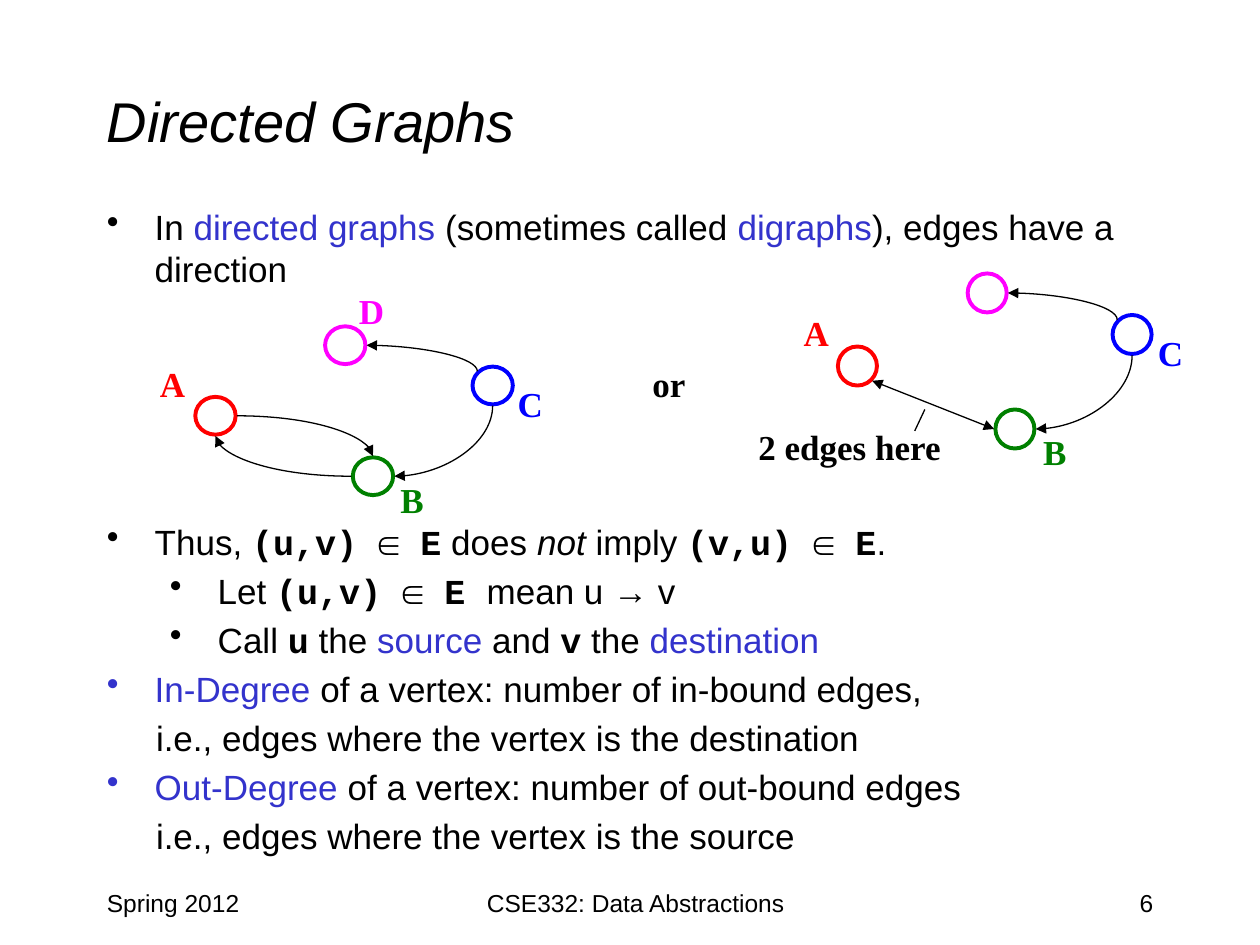
from lxml.etree import SubElement
from pptx import Presentation
from pptx.dml.color import RGBColor
from pptx.enum.shapes import MSO_CONNECTOR, MSO_SHAPE
from pptx.enum.text import MSO_ANCHOR, PP_ALIGN
from pptx.oxml.ns import qn
from pptx.util import Inches, Pt

BLACK, ACCENT = "000000", "3333CC"
RED, GREEN, BLUE, MAGENTA = "FF0000", "008000", "0000FF", "FF00FF"
TERM = {"color": ACCENT}
CODE = {"font": "Courier New", "bold": True}
LABEL = {"font": "Times New Roman", "size": 20, "bold": True}

# Paragraph kind: (left margin, first-line indent, bullet)
KINDS = {
    "plain": (0, 0, None),
    "bullet": (0.38, -0.38, "•"),
    "sub-bullet": (0.88, -0.38, "•"),
    "continued": (0.39, 0, None),
}

# Each paragraph is (kind, runs); a run is a string or (string, format)
INTRODUCTION = [
    ("bullet", ["In ", ("directed graphs", TERM), " (sometimes called ",
                ("digraphs", TERM), "), edges have a direction"]),
]
DEFINITIONS = [
    ("bullet", ["Thus, ", ("(u,v) ∈ E", CODE), " does ", ("not", {"italic": True}),
                " imply ", ("(v,u) ∈ E", CODE), "."]),
    ("sub-bullet", ["Let ", ("(u,v) ∈ E ", CODE), "mean u → v"]),
    ("sub-bullet", ["Call ", ("u", CODE), " the ", ("source", TERM), " and ",
                    ("v", CODE), " the ", ("destination", TERM)]),
    ("bullet", [("In-Degree", TERM), " of a vertex: number of in-bound edges,"]),
    ("continued", ["i.e., edges where the vertex is the destination"]),
    ("bullet", [("Out-Degree", TERM), " of a vertex: number of out-bound edges"]),
    ("continued", ["i.e., edges where the vertex is the source"]),
]

# Directions from a node's centre to the point where an edge meets it
TOP, LEFT, BOTTOM, RIGHT = (0, -1), (-1, 0), (0, 1), (1, 0)
TOP_LEFT, BOTTOM_RIGHT = (-0.71, -0.71), (0.71, 0.71)

# Nodes: colour, left, top.  Labels: node, left, top.
# Edges: start node, side, end node, side, arrow at both ends
GRAPHS = [
    {
        "node_size": (0.32, 0.3),
        "nodes": {"A": (RED, 1.55, 3.15), "B": (GREEN, 2.8, 3.63),
                  "C": (BLUE, 3.75, 2.91), "D": (MAGENTA, 2.58, 2.59)},
        "labels": [("A", 1.17, 2.83), ("B", 3.08, 3.75),
                   ("C", 4.01, 2.99), ("D", 2.75, 2.25)],
        "edges": [("C", BOTTOM, "B", RIGHT, False), ("B", LEFT, "A", BOTTOM, False),
                  ("A", RIGHT, "B", TOP, False), ("C", TOP_LEFT, "D", RIGHT, False)],
    },
    {
        "node_size": (0.31, 0.31),
        "nodes": {"A": (RED, 6.65, 2.75), "B": (GREEN, 7.9, 3.25),
                  "C": (BLUE, 8.83, 2.5), "D": (MAGENTA, 7.68, 2.17)},
        "labels": [("A", 6.28, 2.42), ("B", 8.18, 3.37), ("C", 9.09, 2.58)],
        "edges": [("C", BOTTOM, "B", RIGHT, False), ("C", TOP_LEFT, "D", RIGHT, False),
                  ("B", LEFT, "A", BOTTOM_RIGHT, True)],
    },
]
LABEL_SIZE = (0.41, 0.43)
EDGE_GAP = 0.01


def rgb(color):
    return RGBColor.from_string(color)


def format_run(run, font="Arial", size=20, color=BLACK, bold=False, italic=False):
    run.font.name, run.font.size = font, Pt(size)
    run.font.bold, run.font.italic = bold, italic
    run.font.color.rgb = rgb(color)


def add_text(slide, content, left, top, width, height, align=PP_ALIGN.LEFT,
             anchor=MSO_ANCHOR.TOP, wrap=True, **run_format):
    """Add a text box; content is a string or a list of (kind, runs)."""
    frame = slide.shapes.add_textbox(
        *map(Inches, (left, top, width, height))).text_frame
    frame.word_wrap, frame.vertical_anchor = wrap, anchor
    paragraphs = [("plain", [content])] if isinstance(content, str) else content
    for index, (kind, runs) in enumerate(paragraphs):
        paragraph = frame.add_paragraph() if index else frame.paragraphs[0]
        paragraph.alignment = align
        margin, indent, bullet = KINDS[kind]
        if kind != "plain":
            paragraph.space_before = Pt(4)
        properties = paragraph._p.get_or_add_pPr()
        properties.set("marL", str(Inches(margin)))
        properties.set("indent", str(Inches(indent)))
        if bullet:
            SubElement(properties, qn("a:buChar")).set("char", bullet)
        for item in runs:
            text, changes = (item, {}) if isinstance(item, str) else item
            run = paragraph.add_run()
            run.text = text
            format_run(run, **{**run_format, **changes})


def add_line(slide, start, end, kind=MSO_CONNECTOR.STRAIGHT, arrows=()):
    connector = slide.shapes.add_connector(kind, *map(Inches, (*start, *end)))
    connector.line.color.rgb = rgb(BLACK)
    connector.line.width = Pt(0.75)
    for arrow in arrows:
        SubElement(connector.line._get_or_add_ln(), qn(arrow)).set("type", "triangle")
    SubElement(connector._element.spPr, qn("a:effectLst"))
    return connector


def add_curve(slide, start, end, vertical_start):
    """Add a quarter-turn arrow; one that starts vertically is turned by 90°."""
    if vertical_start:
        middle_x, middle_y = (start[0] + end[0]) / 2, (start[1] + end[1]) / 2
        half_x, half_y = (end[1] - start[1]) / 2, abs(end[0] - start[0]) / 2
        start = (middle_x - half_x, middle_y - half_y)
        end = (middle_x + half_x, middle_y + half_y)
    curve = add_line(slide, start, end, MSO_CONNECTOR.CURVE, ["a:tailEnd"])
    properties = curve._element.spPr
    properties.find(qn("a:prstGeom")).set("prst", "curvedConnector2")
    if vertical_start:
        properties.find(qn("a:xfrm")).set("rot", str(90 * 60000))


def add_graph(slide, graph):
    width, height = graph["node_size"]
    nodes = graph["nodes"]

    def edge_point(name, side):
        _, left, top = nodes[name]
        return (left + width / 2 + side[0] * (width / 2 + EDGE_GAP),
                top + height / 2 + side[1] * (height / 2 + EDGE_GAP))

    for color, left, top in nodes.values():
        node = slide.shapes.add_shape(
            MSO_SHAPE.OVAL, *map(Inches, (left, top, width, height)))
        node.shadow.inherit = False
        node.fill.solid()
        node.fill.fore_color.rgb = rgb("FFFFFF")
        node.line.color.rgb = rgb(color)
        node.line.width = Pt(2.25)
    for name, left, top in graph["labels"]:
        add_text(slide, name, left, top, *LABEL_SIZE, wrap=False,
                 color=nodes[name][0], **LABEL)
    for source, source_side, target, target_side, two_way in graph["edges"]:
        start, end = edge_point(source, source_side), edge_point(target, target_side)
        if two_way:
            add_line(slide, start, end, arrows=["a:headEnd", "a:tailEnd"])
        else:
            add_curve(slide, start, end, vertical_start=source_side[1] != 0)


def main():
    presentation = Presentation()
    presentation.slide_width, presentation.slide_height = Inches(10), Inches(7.5)
    slide = presentation.slides.add_slide(presentation.slide_layouts[6])

    add_text(slide, "Directed Graphs", 0.75, 0.33, 8.5, 1.25,
             anchor=MSO_ANCHOR.MIDDLE, size=32, italic=True)
    add_text(slide, INTRODUCTION, 0.75, 1.58, 8.5, 0.83)
    add_text(slide, DEFINITIONS, 0.75, 4.08, 8.5, 2.67)
    for text, left, width, align in [
        ("Spring 2012", 0.75, 2.08, PP_ALIGN.LEFT),
        ("CSE332: Data Abstractions", 3.17, 3.75, PP_ALIGN.CENTER),
        ("6", 7.17, 2.08, PP_ALIGN.RIGHT),
    ]:
        add_text(slide, text, left, 7, width, 0.5, align=align, size=14)

    add_text(slide, "or", 5.08, 2.83, 0.47, 0.44, wrap=False, **LABEL)
    add_text(slide, "2 edges here", 5.92, 3.33, 1.72, 0.44, **LABEL)
    add_line(slide, (7.26, 3.42), (7.34, 3.25))
    for graph in GRAPHS:
        add_graph(slide, graph)
    presentation.save("out.pptx")


if __name__ == "__main__":
    main()
